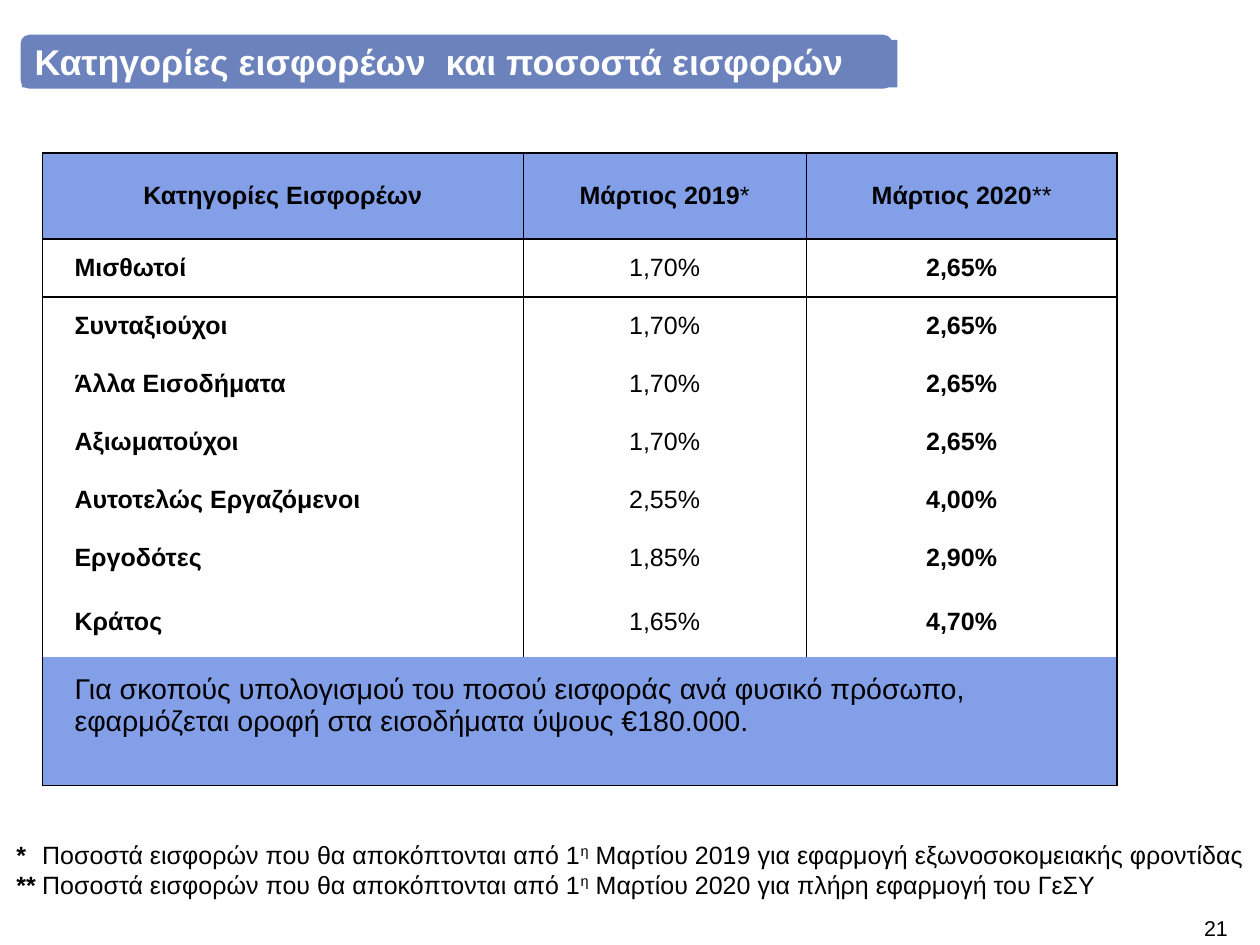
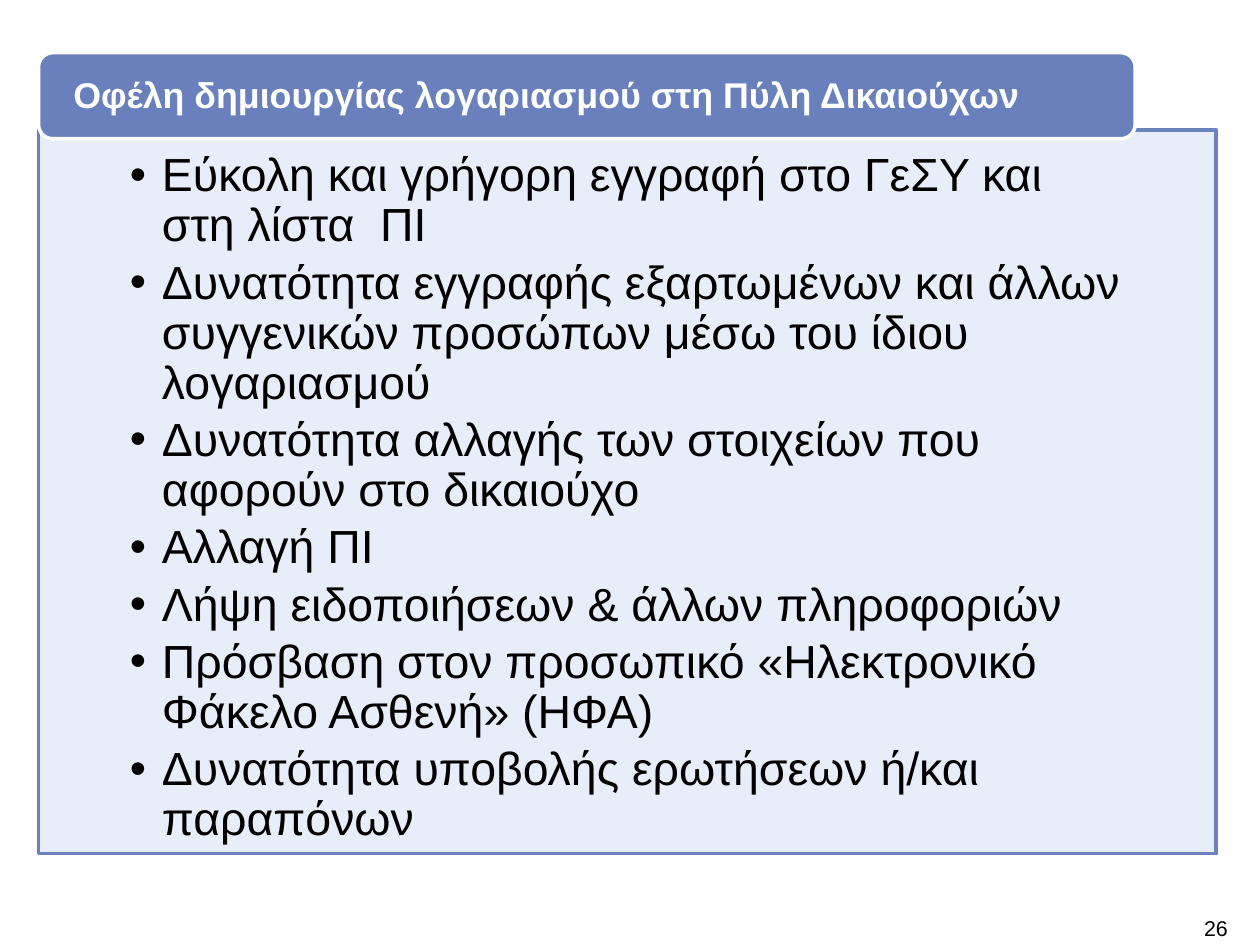
from lxml import etree
from pptx import Presentation
from pptx.dml.color import RGBColor
from pptx.enum.shapes import MSO_SHAPE
from pptx.enum.text import MSO_ANCHOR, MSO_AUTO_SIZE, PP_ALIGN
from pptx.oxml.ns import qn
from pptx.util import Inches, Pt

LEFT, CENTER, RIGHT = PP_ALIGN.LEFT, PP_ALIGN.CENTER, PP_ALIGN.RIGHT
TOP, MIDDLE = MSO_ANCHOR.TOP, MSO_ANCHOR.MIDDLE
NO_FIT = MSO_AUTO_SIZE.NONE
ROUNDED = MSO_SHAPE.ROUNDED_RECTANGLE

FONT = "Arial"
BLACK = RGBColor(0x00, 0x00, 0x00)
WHITE = RGBColor(0xFF, 0xFF, 0xFF)
BAND_BLUE = RGBColor(0x6B, 0x82, 0xBD)
TAB_BLUE = RGBColor(0x69, 0x80, 0xBC)
TABLE_BLUE = RGBColor(0x83, 0x9F, 0xE7)
PANEL_BLUE = RGBColor(0xE6, 0xEC, 0xFA)
PLAIN_TABLE_STYLE = "{2D5ABB26-0587-4C30-8999-92F81FD0307C}"
TITLE_ONLY, TITLE_AND_CONTENT = 5, 1

# Content
RATES_TITLE = "Κατηγορίες εισφορέων  και ποσοστά εισφορών"
RATES_HEADER = [("Κατηγορίες Εισφορέων", ""), ("Μάρτιος 2019", "*"), ("Μάρτιος 2020", "**")]
RATES = [
    ("Μισθωτοί", "1,70%", "2,65%"),
    ("Συνταξιούχοι", "1,70%", "2,65%"),
    ("Άλλα Εισοδήματα", "1,70%", "2,65%"),
    ("Αξιωματούχοι", "1,70%", "2,65%"),
    ("Αυτοτελώς Εργαζόμενοι", "2,55%", "4,00%"),
    ("Εργοδότες", "1,85%", "2,90%"),
    ("Κράτος", "1,65%", "4,70%"),
]
CEILING_NOTE = ("Για σκοπούς υπολογισμού του ποσού εισφοράς ανά φυσικό πρόσωπο, "
                "εφαρμόζεται οροφή στα εισοδήματα ύψους €180.000.")
COLUMN_WIDTHS = [3.74, 2.2, 2.42]
ROW_HEIGHTS = [0.67] + [0.45] * 5 + [0.46, 0.54, 1.0]
FOOTNOTE_START = "Ποσοστά εισφορών που θα αποκόπτονται από 1"
FOOTNOTES = [
    ("*", " Μαρτίου 2019 για εφαρμογή εξωνοσοκομειακής φροντίδας"),
    ("**", " Μαρτίου 2020 για πλήρη εφαρμογή του ΓεΣΥ"),
]

BENEFITS_TITLE = "Οφέλη δημιουργίας λογαριασμού στη Πύλη Δικαιούχων"
BENEFITS = [
    "Εύκολη και γρήγορη εγγραφή στο ΓεΣΥ και στη λίστα  ΠΙ",
    "Δυνατότητα εγγραφής εξαρτωμένων και άλλων συγγενικών προσώπων μέσω του ίδιου λογαριασμού",
    "Δυνατότητα αλλαγής των στοιχείων που αφορούν στο δικαιούχο",
    "Αλλαγή ΠΙ",
    "Λήψη ειδοποιήσεων & άλλων πληροφοριών",
    "Πρόσβαση στον προσωπικό «Ηλεκτρονικό Φάκελο Ασθενή» (ΗΦΑ)",
    "Δυνατότητα υποβολής ερωτήσεων ή/και παραπόνων",
]


# Shared helpers
def place(shape, left, top, width, height):
    shape.left, shape.top = Inches(left), Inches(top)
    shape.width, shape.height = Inches(width), Inches(height)


def set_margins(target, left, top, right, bottom):
    target.margin_left, target.margin_top = Inches(left), Inches(top)
    target.margin_right, target.margin_bottom = Inches(right), Inches(bottom)


def add_run(paragraph, text, size, bold=False, color=BLACK, raised=False):
    run = paragraph.add_run()
    run.text = text
    run.font.name, run.font.size = FONT, Pt(size)
    run.font.bold = bold
    run.font.color.rgb = color
    if raised:
        run.font._element.set("baseline", "30000")


def set_indent(paragraph, left, first):
    properties = paragraph._p.get_or_add_pPr()
    properties.set("marL", str(Inches(left)))
    properties.set("indent", str(Inches(first)))
    return properties


def add_text_box(slide, box, margins):
    frame = slide.shapes.add_textbox(*map(Inches, box)).text_frame
    frame.word_wrap = True
    set_margins(frame, *margins)
    return frame


def add_slide(layout, title, title_box, title_margin, number, band_box, band_color):
    slide = presentation.slides.add_slide(presentation.slide_layouts[layout])
    band = slide.shapes.add_shape(ROUNDED, *map(Inches, band_box))
    band.shadow.inherit = False
    band.fill.solid()
    band.fill.fore_color.rgb = band_color
    band.line.fill.background()

    # The title lies over its band
    heading = slide.shapes.title
    slide.shapes.element.append(heading.element)
    place(heading, *title_box)
    frame = heading.text_frame
    frame.auto_size, frame.word_wrap, frame.vertical_anchor = NO_FIT, True, MIDDLE
    set_margins(frame, title_margin, 0, title_margin, 0)
    paragraph = frame.paragraphs[0]
    paragraph.alignment, paragraph.line_spacing = LEFT, 0.9
    add_run(paragraph, title, 20, True, WHITE)

    # Slide number
    frame = add_text_box(slide, (7.51, 7.12, 2.04, 0.2), (0, 0, 0, 0))
    frame.paragraphs[0].alignment = RIGHT
    add_run(frame.paragraphs[0], number, 12)
    return slide, band


def style_cell(cell, fill, **borders):
    properties = cell._tc.get_or_add_tcPr()
    for side in "LRTB":
        if side in borders:
            line = etree.SubElement(properties, qn(f"a:ln{side}"), w=str(Pt(borders[side])))
            solid = etree.SubElement(line, qn("a:solidFill"))
            etree.SubElement(solid, qn("a:srgbClr"), val=str(BLACK))
    cell.fill.solid()
    cell.fill.fore_color.rgb = fill
    cell.vertical_anchor = MIDDLE
    set_margins(cell, 0, 0, 0, 0)


def add_rates_table(slide):
    shape = slide.shapes.add_table(
        len(ROW_HEIGHTS), len(COLUMN_WIDTHS), Inches(0.33), Inches(1.19),
        Inches(sum(COLUMN_WIDTHS)), Inches(sum(ROW_HEIGHTS)))
    table = shape.table
    table._tbl.tblPr.find(qn("a:tableStyleId")).text = PLAIN_TABLE_STYLE
    for column, width in zip(table.columns, COLUMN_WIDTHS):
        column.width = Inches(width)
    for row, height in zip(table.rows, ROW_HEIGHTS):
        row.height = Inches(height)

    sides = [{"L": 1, "R": 0.5}, {"L": 0.5, "R": 0.5}, {"L": 0.5, "R": 1}]
    for index, (label, mark) in enumerate(RATES_HEADER):
        cell = table.cell(0, index)
        style_cell(cell, TABLE_BLUE, T=1, B=1, **sides[index])
        paragraph = cell.text_frame.paragraphs[0]
        paragraph.alignment = CENTER
        add_run(paragraph, label, 14, True)
        if mark:
            add_run(paragraph, mark, 14)

    for row, values in enumerate(RATES, 1):
        for index, value in enumerate(values):
            cell = table.cell(row, index)
            top = {"T": 1} if row == 1 else {}
            style_cell(cell, WHITE, **top, **sides[index])
            paragraph = cell.text_frame.paragraphs[0]
            if index == 0:
                set_indent(paragraph, 0.25, 0)
            else:
                paragraph.alignment = CENTER
            add_run(paragraph, value, 14, index != 1)

    # Closing note across all columns
    last = len(ROW_HEIGHTS) - 1
    note = table.cell(last, 0)
    note.merge(table.cell(last, len(COLUMN_WIDTHS) - 1))
    style_cell(note, TABLE_BLUE, L=1, R=1, B=0.5)
    note.vertical_anchor, note.margin_top = TOP, Inches(0.13)
    paragraph = note.text_frame.paragraphs[0]
    set_indent(paragraph, 0.25, 0)
    add_run(paragraph, CEILING_NOTE, 16)


def add_footnotes(slide):
    frame = add_text_box(slide, (0.03, 6.48, 9.77, 0.6), (0.1, 0.05, 0, 0.05))
    for index, (mark, ending) in enumerate(FOOTNOTES):
        paragraph = frame.add_paragraph() if index else frame.paragraphs[0]
        set_indent(paragraph, 0.2, -0.2)
        add_run(paragraph, mark + "\t", 14, True)
        add_run(paragraph, FOOTNOTE_START, 14)
        add_run(paragraph, "η", 14, raised=True)
        add_run(paragraph, ending, 14)


def fill_benefits(slide):
    body = slide.placeholders[1]
    place(body, 0.3, 1.01, 9.16, 5.63)
    body.fill.solid()
    body.fill.fore_color.rgb = PANEL_BLUE
    color = body.element.spPr.find(qn("a:solidFill"))[0]
    etree.SubElement(color, qn("a:alpha"), val="90000")
    body.line.color.rgb, body.line.width = BAND_BLUE, Pt(2)
    frame = body.text_frame
    frame.auto_size, frame.word_wrap, frame.vertical_anchor = NO_FIT, True, TOP
    set_margins(frame, 0.71, 0.17, 0.71, 0.2)
    for index, benefit in enumerate(BENEFITS):
        paragraph = frame.add_paragraph() if index else frame.paragraphs[0]
        properties = set_indent(paragraph, 0.25, -0.25)
        etree.SubElement(properties, qn("a:buChar"), char="•")
        paragraph.line_spacing = 0.9
        paragraph.space_before, paragraph.space_after = Pt(0), Pt(4)
        add_run(paragraph, benefit, 26)


presentation = Presentation()
presentation.slide_width, presentation.slide_height = Inches(9.8), Inches(7.35)

# Contribution rates
rates_title_box = (0.17, 0.31, 6.81, 0.37)
rates_slide, _ = add_slide(TITLE_ONLY, RATES_TITLE, rates_title_box, 0.1, "21",
                           (0.16, 0.27, 6.78, 0.42), BAND_BLUE)
rates_slide.shapes.title.fill.solid()
rates_slide.shapes.title.fill.fore_color.rgb = BAND_BLUE
add_rates_table(rates_slide)
add_footnotes(rates_slide)

# Account benefits
benefits_slide, tab = add_slide(TITLE_AND_CONTENT, BENEFITS_TITLE, (0.33, 0.45, 8.47, 0.6), 0.24,
                                "26", (0.3, 0.41, 8.53, 0.67), TAB_BLUE)
tab.line.color.rgb, tab.line.width = WHITE, Pt(2)
fill_benefits(benefits_slide)

presentation.save("out.pptx")
